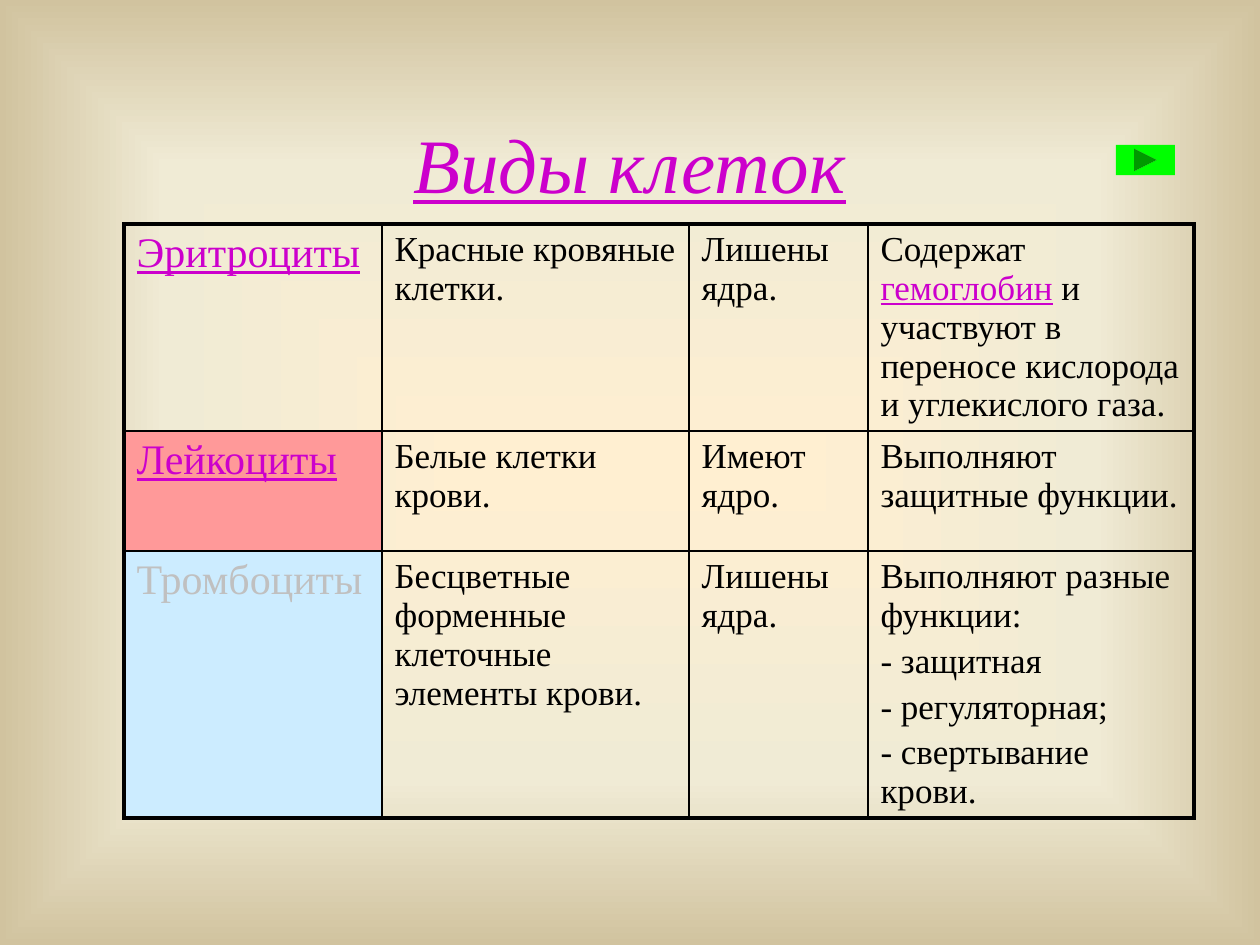
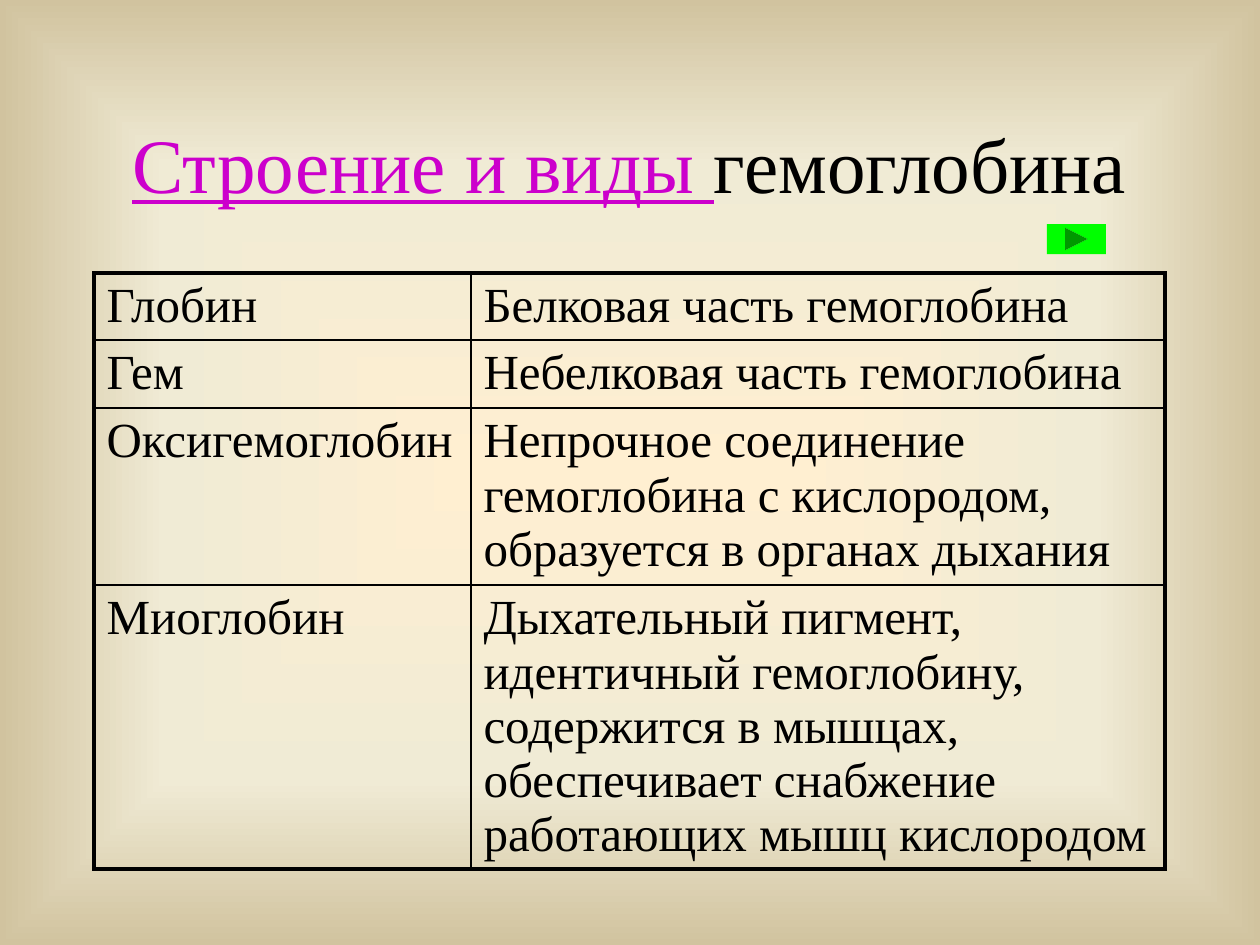
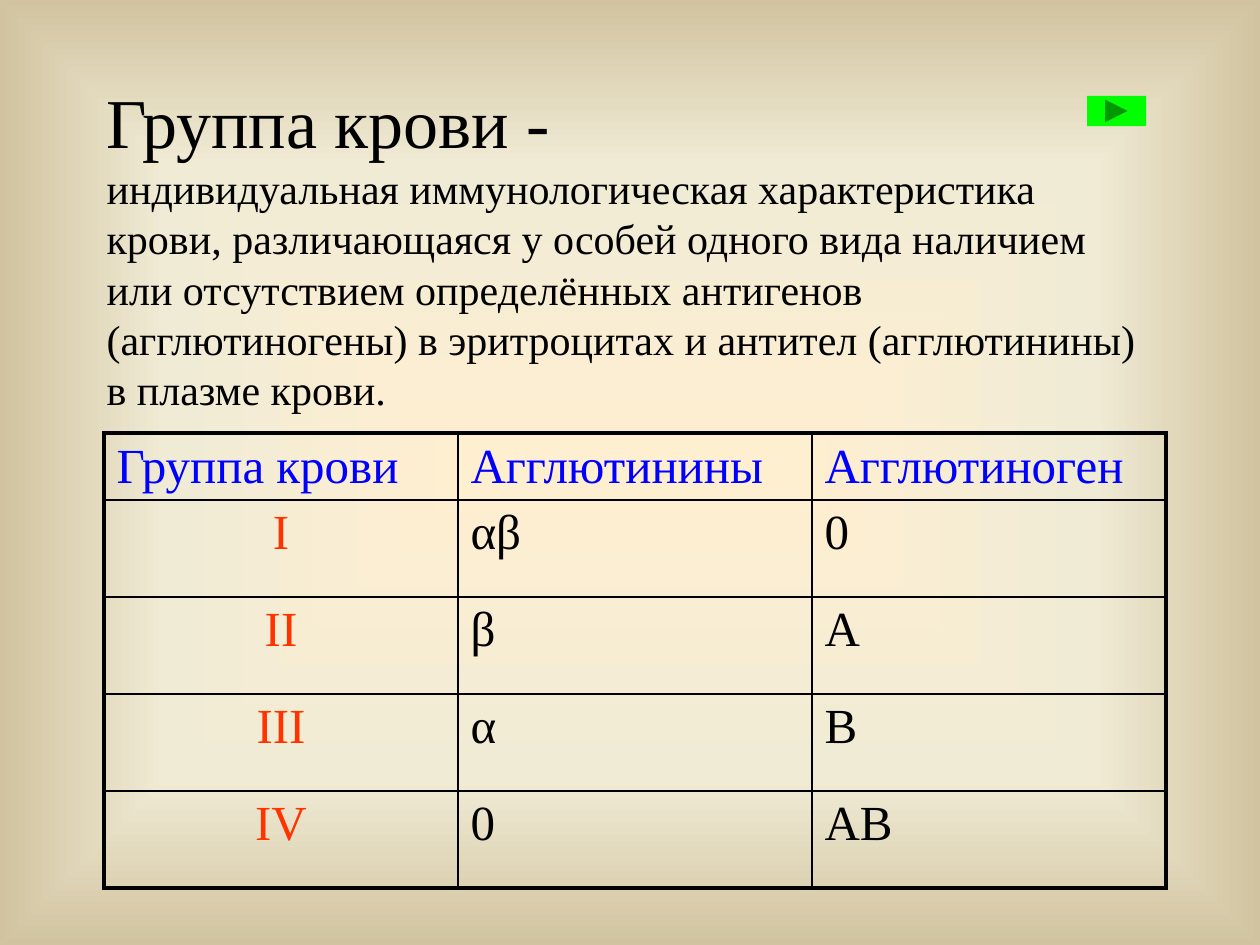
from dataclasses import dataclass

import lxml.etree
import pptx
import pptx.dml.color
import pptx.enum.shapes
import pptx.enum.text
import pptx.oxml.ns
import pptx.slide
import pptx.table
import pptx.text.text
import pptx.util

RGBColor = pptx.dml.color.RGBColor
PP_ALIGN = pptx.enum.text.PP_ALIGN
MSO_ANCHOR = pptx.enum.text.MSO_ANCHOR
qn = pptx.oxml.ns.qn

BLACK = RGBColor(0x00, 0x00, 0x00)
MAGENTA = RGBColor(0xCC, 0x00, 0xCC)
SILVER = RGBColor(0xC0, 0xC0, 0xC0)
BLUE = RGBColor(0x00, 0x00, 0xFF)
ORANGE = RGBColor(0xFF, 0x33, 0x00)
GREEN = RGBColor(0x00, 0xFF, 0x00)
ROSE = RGBColor(0xFF, 0x99, 0x99)
SKY = RGBColor(0xCC, 0xEC, 0xFF)
CREAM = RGBColor(0xFF, 0xEF, 0xD1)
IVORY = RGBColor(0xF0, 0xEB, 0xD5)
SAND = RGBColor(0xD1, 0xC3, 0x9F)

FONT = "Times New Roman"
EMU_PER_PX = 914400 / 126
BACKDROP_STOPS = ((0, CREAM), (65, IVORY), (100, SAND))
OUTER_BORDER = pptx.util.Pt(2.25)
INNER_BORDER = pptx.util.Pt(1)


@dataclass(frozen=True)
class Box:
    left: int
    top: int
    width: int
    height: int

    def emu(self) -> tuple[int, ...]:
        return tuple(px(side) for side in (self.left, self.top, self.width, self.height))


@dataclass(frozen=True)
class Phrase:
    text: str
    size: int
    color: RGBColor = BLACK
    underline: bool = False
    italic: bool = False


@dataclass(frozen=True)
class Line:
    phrases: tuple[Phrase, ...]
    align: PP_ALIGN = PP_ALIGN.LEFT


@dataclass(frozen=True)
class Entry:
    lines: tuple[Line, ...]
    fill: RGBColor | None = None


@dataclass(frozen=True)
class Grid:
    left: int
    top: int
    columns: tuple[int, ...]
    rows: tuple[int, ...]
    entries: tuple[tuple[Entry, ...], ...]


@dataclass(frozen=True)
class Topic:
    title: tuple[Line, ...]
    title_box: Box
    anchor: MSO_ANCHOR
    grid: Grid
    next_left: int
    next_top: int


TITLE_BOX = Box(94, 84, 1071, 158)
DEFINITION_BOX = Box(94, 72, 1071, 352)
NEXT_WIDTH, NEXT_HEIGHT = 59, 30


def px(length: int) -> int:
    return round(length * EMU_PER_PX)


def heading(*phrases: Phrase) -> tuple[Line, ...]:
    return (Line(phrases, PP_ALIGN.CENTER),)


def entry(*texts: str, size: int, color: RGBColor = BLACK, underline: bool = False,
          fill: RGBColor | None = None, align: PP_ALIGN = PP_ALIGN.LEFT) -> Entry:
    return Entry(tuple(Line((Phrase(text, size, color, underline),), align) for text in texts), fill)


def detail(*texts: str) -> Entry:
    return entry(*texts, size=20)


def term(text: str) -> Entry:
    return entry(text, size=28)


def column_head(text: str) -> Entry:
    return entry(text, size=28, color=BLUE)


def blood_group(numeral: str, agglutinins: str, agglutinogen: str) -> tuple[Entry, ...]:
    group = entry(numeral, size=28, color=ORANGE, align=PP_ALIGN.CENTER)
    return group, term(agglutinins), term(agglutinogen)


HEMOGLOBIN_ROLE = Entry((Line((
    Phrase("Содержат ", 20),
    Phrase("гемоглобин", 20, MAGENTA, underline=True),
    Phrase(" и участвуют в переносе кислорода и углекислого газа.", 20),
)),))

CELL_TYPES = Topic(
    heading(Phrase("Виды клеток", 44, MAGENTA, underline=True, italic=True)),
    TITLE_BOX, MSO_ANCHOR.MIDDLE,
    Grid(124, 224, (258, 307, 179, 326), (207, 120, 267), (
        (entry("Эритроциты", size=24, color=MAGENTA, underline=True),
         detail("Красные кровяные клетки."), detail("Лишены ядра."), HEMOGLOBIN_ROLE),
        (entry("Лейкоциты", size=24, color=MAGENTA, underline=True, fill=ROSE),
         detail("Белые клетки крови."), detail("Имеют ядро."),
         detail("Выполняют защитные функции.")),
        (entry("Тромбоциты", size=24, color=SILVER, fill=SKY),
         detail("Бесцветные форменные клеточные элементы крови."), detail("Лишены ядра."),
         detail("Выполняют разные функции:", "- защитная", "- регуляторная;",
                "- свертывание крови.")),
    )),
    1116, 145,
)

HEMOGLOBIN = Topic(
    heading(Phrase("Строение и виды ", 44, MAGENTA, underline=True),
            Phrase("гемоглобина", 44)),
    TITLE_BOX, MSO_ANCHOR.MIDDLE,
    Grid(94, 273, (377, 694), (67, 68, 177, 284), (
        (term("Глобин"), term("Белковая часть гемоглобина")),
        (term("Гем"), term("Небелковая часть гемоглобина")),
        (term("Оксигемоглобин"),
         term("Непрочное соединение гемоглобина с кислородом, образуется в органах дыхания")),
        (term("Миоглобин"),
         term("Дыхательный пигмент, идентичный гемоглобину, содержится в мышцах, "
              "обеспечивает снабжение работающих мышц кислородом")),
    )),
    1047, 224,
)

BLOOD_GROUPS = Topic(
    (Line((Phrase("Группа крови -", 40),)),
     Line((Phrase("индивидуальная иммунологическая характеристика крови, различающаяся "
                  "у особей одного вида наличием или отсутствием определённых антигенов "
                  "(агглютиногены) в эритроцитах и антител (агглютинины) в плазме крови.", 24),))),
    DEFINITION_BOX, MSO_ANCHOR.TOP,
    Grid(104, 433, (354,) * 3, (67,) + (97,) * 4, (
        (column_head("Группа крови"), column_head("Агглютинины"), column_head("Агглютиноген")),
        blood_group("I", "αβ", "0"),
        blood_group("II", "β", "А"),
        blood_group("III", "α", "В"),
        blood_group("IV", "0", "АВ"),
    )),
    1087, 96,
)


def write_lines(frame: pptx.text.text.TextFrame, lines: tuple[Line, ...], gap: float = 0) -> None:
    for index, line in enumerate(lines):
        paragraph = frame.paragraphs[0] if index == 0 else frame.add_paragraph()
        paragraph.alignment = line.align
        paragraph.space_before = pptx.util.Pt(line.phrases[0].size * gap)
        for phrase in line.phrases:
            run = paragraph.add_run()
            run.text = phrase.text
            run.font.name = FONT
            run.font.size = pptx.util.Pt(phrase.size)
            run.font.color.rgb = phrase.color
            run.font.underline = phrase.underline
            run.font.italic = phrase.italic


def paint_backdrop(master: pptx.slide.SlideMaster) -> None:
    master.background.fill.gradient()
    gradient = master.element.find(".//" + qn("a:gradFill"))
    for child in list(gradient):
        gradient.remove(child)
    stops = lxml.etree.SubElement(gradient, qn("a:gsLst"))
    for percent, color in BACKDROP_STOPS:
        stop = lxml.etree.SubElement(stops, qn("a:gs"), pos=str(percent * 1000))
        lxml.etree.SubElement(stop, qn("a:srgbClr"), val=str(color))
    shade = lxml.etree.SubElement(gradient, qn("a:path"), path="shape")
    lxml.etree.SubElement(shade, qn("a:fillToRect"), l="50000", t="50000", r="50000", b="50000")


def draw_borders(cell: pptx.table._Cell, outer: dict[str, bool]) -> None:
    properties = cell._tc.get_or_add_tcPr()
    for index, (side, is_outer) in enumerate(outer.items()):
        width = OUTER_BORDER if is_outer else INNER_BORDER
        border = lxml.etree.Element(qn(f"a:ln{side}"), w=str(width))
        fill = lxml.etree.SubElement(border, qn("a:solidFill"))
        lxml.etree.SubElement(fill, qn("a:srgbClr"), val=str(BLACK))
        properties.insert(index, border)


def add_title(slide: pptx.slide.Slide, topic: Topic) -> None:
    title = slide.shapes.title
    title.left, title.top, title.width, title.height = topic.title_box.emu()
    frame = title.text_frame
    frame.word_wrap = True
    frame.auto_size = pptx.enum.text.MSO_AUTO_SIZE.NONE
    frame.vertical_anchor = topic.anchor
    write_lines(frame, topic.title)


def add_grid(slide: pptx.slide.Slide, grid: Grid) -> None:
    box = Box(grid.left, grid.top, sum(grid.columns), sum(grid.rows))
    last_row, last_column = len(grid.rows) - 1, len(grid.columns) - 1
    table = slide.shapes.add_table(last_row + 1, last_column + 1, *box.emu()).table
    table.first_row = False
    table.horz_banding = False
    for column, width in zip(table.columns, grid.columns):
        column.width = px(width)
    for row, height in zip(table.rows, grid.rows):
        row.height = px(height)
    for r, entries in enumerate(grid.entries):
        for c, content in enumerate(entries):
            cell = table.cell(r, c)
            if content.fill is None:
                cell.fill.background()
            else:
                cell.fill.solid()
                cell.fill.fore_color.rgb = content.fill
            draw_borders(cell, {"L": c == 0, "R": c == last_column,
                                "T": r == 0, "B": r == last_row})
            write_lines(cell.text_frame, content.lines, gap=0.2)


def add_next_button(slide: pptx.slide.Slide, left: int, top: int) -> None:
    button = slide.shapes.add_shape(
        pptx.enum.shapes.MSO_SHAPE.ACTION_BUTTON_FORWARD_OR_NEXT,
        *Box(left, top, NEXT_WIDTH, NEXT_HEIGHT).emu())
    button.shadow.inherit = False
    button.fill.solid()
    button.fill.fore_color.rgb = GREEN
    button.line.fill.background()


def main() -> None:
    deck = pptx.Presentation()
    deck.slide_width, deck.slide_height = px(1260), px(945)
    paint_backdrop(deck.slide_master)
    for topic in (CELL_TYPES, HEMOGLOBIN, BLOOD_GROUPS):
        slide = deck.slides.add_slide(deck.slide_layouts[5])
        add_title(slide, topic)
        add_grid(slide, topic.grid)
        add_next_button(slide, topic.next_left, topic.next_top)
    deck.save("out.pptx")


if __name__ == "__main__":
    main()
